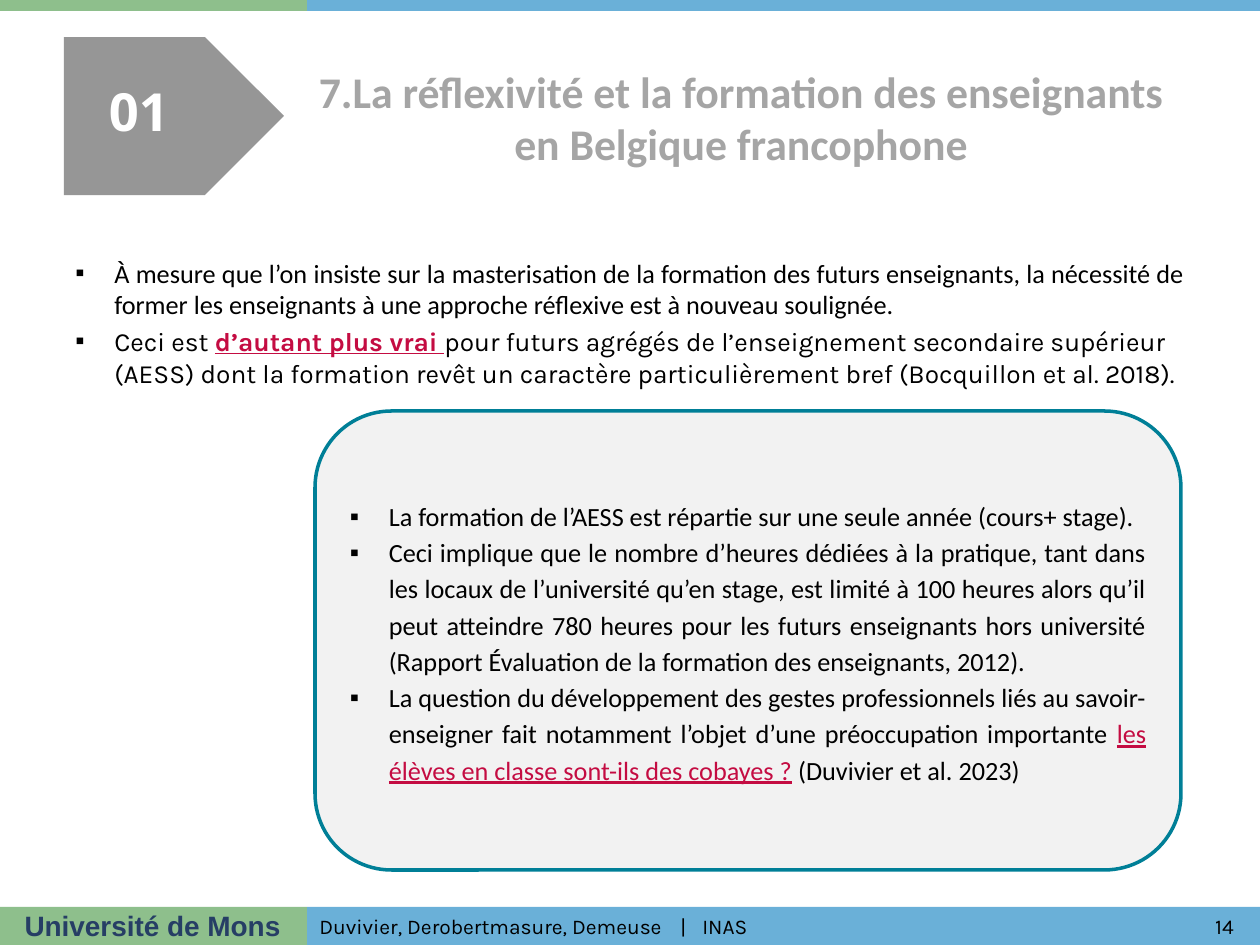
from dataclasses import dataclass

from lxml.etree import SubElement
from pptx import Presentation
from pptx.dml.color import RGBColor
from pptx.enum.shapes import MSO_SHAPE
from pptx.enum.text import MSO_ANCHOR, MSO_AUTO_SIZE, PP_ALIGN
from pptx.oxml.ns import qn
from pptx.util import Emu, Pt


@dataclass(frozen=True)
class Theme:
    green: str = "8EBF8C"
    blue: str = "6AB0D8"
    navy: str = "263E65"
    grey: str = "969696"
    title_grey: str = "A5A5A5"
    panel: str = "F2F2F2"
    teal: str = "007F97"
    accent: str = "C40C42"
    black: str = "000000"
    white: str = "FFFFFF"
    footer_size: int = 12
    body_size: int = 15
    brand_size: int = 16
    title_size: int = 25
    number_size: int = 30
    sans: str = "Calibri"
    footer_font: str = "Karla"
    brand_font: str = "Arial"
    number_font: str = "Open Sans"


def px(length):
    return Emu(round(length * 914400 / 126))


class SlideBuilder:
    def __init__(self, page, theme):
        self.page = page
        self.theme = theme

    def shape(self, kind, bounds, fill, line=None):
        shape = self.page.shapes.add_shape(kind, *map(px, bounds))
        shape.shadow.inherit = False
        shape.fill.solid()
        shape.fill.fore_color.rgb = RGBColor.from_string(fill)
        if line:
            shape.line.color.rgb = RGBColor.from_string(line)
            shape.line.width = Pt(2)
        else:
            shape.line.fill.background()
        return shape

    def text_box(self, bounds, anchor=MSO_ANCHOR.TOP):
        box = self.page.shapes.add_textbox(*map(px, bounds))
        box.text_frame.word_wrap = True
        box.text_frame.vertical_anchor = anchor
        return box

    def span(self, para, text, size, font, color, bold=False, underline=False):
        span = para.add_run()
        span.text = text
        span.font.size = Pt(size)
        span.font.name = font
        span.font.color.rgb = RGBColor.from_string(color)
        span.font.bold = bold
        span.font.underline = underline

    def label(self, bounds, text, size, font, color, bold=False,
              align=PP_ALIGN.CENTER, anchor=MSO_ANCHOR.MIDDLE, tabs=()):
        para = self.text_box(bounds, anchor).text_frame.paragraphs[0]
        para.alignment = align
        if tabs:
            stops = SubElement(para._p.get_or_add_pPr(), qn("a:tabLst"))
            for position in tabs:
                SubElement(stops, qn("a:tab"), pos=str(px(position)), algn="l")
        self.span(para, text, size, font, color, bold)

    def title(self, bounds, text):
        title = self.page.shapes.title
        title.left, title.top, title.width, title.height = map(px, bounds)
        frame = title.text_frame
        frame.auto_size = MSO_AUTO_SIZE.NONE
        frame.vertical_anchor = MSO_ANCHOR.MIDDLE
        para = frame.paragraphs[0]
        para.alignment = PP_ALIGN.CENTER
        self.span(para, text, self.theme.title_size, self.theme.sans,
                  self.theme.title_grey, bold=True)

    def bullet(self, para, spans, font, align=PP_ALIGN.JUSTIFY,
               line_spacing=None, space_before=None):
        para.alignment = align
        para.line_spacing = line_spacing
        if space_before:
            para.space_before = Pt(space_before)
        properties = para._p.get_or_add_pPr()
        properties.set("marL", str(px(39)))
        properties.set("indent", str(px(-39)))
        SubElement(properties, qn("a:buFont"), typeface="Arial")
        SubElement(properties, qn("a:buChar"), char="▪")
        for text, color, bold, underline in spans:
            self.span(para, text, self.theme.body_size, font, color, bold, underline)


def main():
    theme = Theme()
    deck = Presentation()
    deck.slide_width, deck.slide_height = px(1260), px(945)
    page = deck.slides.add_slide(deck.slide_layouts[5])
    builder = SlideBuilder(page, theme)

    split = 307
    for top, height in ((0, 11), (907, 38)):
        builder.shape(MSO_SHAPE.RECTANGLE, (0, top, split, height), theme.green)
        builder.shape(MSO_SHAPE.RECTANGLE, (split, top, 1260 - split, height), theme.blue)

    builder.label((-1, 902, split, 47), "Université de Mons", theme.brand_size,
                  theme.brand_font, theme.navy, bold=True)
    builder.label((1189, 907, 71, 38), "14", theme.footer_size,
                  theme.footer_font, theme.black)
    builder.label((split, 907, 882, 38), "Duvivier, Derobertmasure, Demeuse\t|\tINAS",
                  theme.footer_size, theme.footer_font, theme.black,
                  align=PP_ALIGN.LEFT, tabs=(361, 383))

    builder.title((285, 38, 912, 158),
                  "7.La réflexivité et la formation des enseignants en Belgique francophone")

    body = builder.text_box((63, 220, 1134, 624)).text_frame
    body.margin_top = px(37)
    builder.bullet(body.paragraphs[0], [
        ("À mesure que l’on insiste sur la masterisation de la formation des futurs "
         "enseignants, la nécessité de former les enseignants à une approche réflexive "
         "est à nouveau soulignée.", theme.black, False, False),
    ], theme.sans)
    builder.bullet(body.add_paragraph(), [
        ("Ceci est ", theme.black, False, False),
        ("d’autant plus vrai ", theme.accent, True, True),
        ("pour futurs agrégés de l’enseignement secondaire supérieur (AESS) dont la "
         "formation revêt un caractère particulièrement bref (Bocquillon et al. 2018).",
         theme.black, False, False),
    ], theme.footer_font, align=PP_ALIGN.LEFT, space_before=3)

    panel = builder.shape(MSO_SHAPE.ROUNDED_RECTANGLE, (315, 411, 866, 459),
                          theme.panel, theme.teal).text_frame
    panel.word_wrap = True
    panel.vertical_anchor = MSO_ANCHOR.MIDDLE
    panel_bullets = [
        [("La formation de l’AESS est répartie sur une seule année (cours+ stage).",
          theme.black, False, False)],
        [("Ceci implique que le nombre d’heures dédiées à la pratique, tant dans les "
          "locaux de l’université qu’en stage, est limité à 100 heures alors qu’il peut "
          "atteindre 780 heures pour les futurs enseignants hors université (Rapport "
          "Évaluation de la formation des enseignants, 2012).",
          theme.black, False, False)],
        [("La question du développement des gestes professionnels liés au "
          "savoir-enseigner fait notamment l’objet d’une préoccupation importante ",
          theme.black, False, False),
         ("les élèves en classe sont-ils des cobayes ?", theme.accent, False, True),
         (" (Duvivier et al. 2023)", theme.black, False, False)],
    ]
    for index, spans in enumerate(panel_bullets):
        para = panel.add_paragraph() if index else panel.paragraphs[0]
        builder.bullet(para, spans, theme.sans, line_spacing=1.15)

    builder.shape(MSO_SHAPE.PENTAGON, (64, 37, 220, 158), theme.grey)
    builder.label((64, 72, 150, 77), "01", theme.number_size, theme.number_font,
                  theme.white, bold=True)

    deck.save("out.pptx")


if __name__ == "__main__":
    main()
